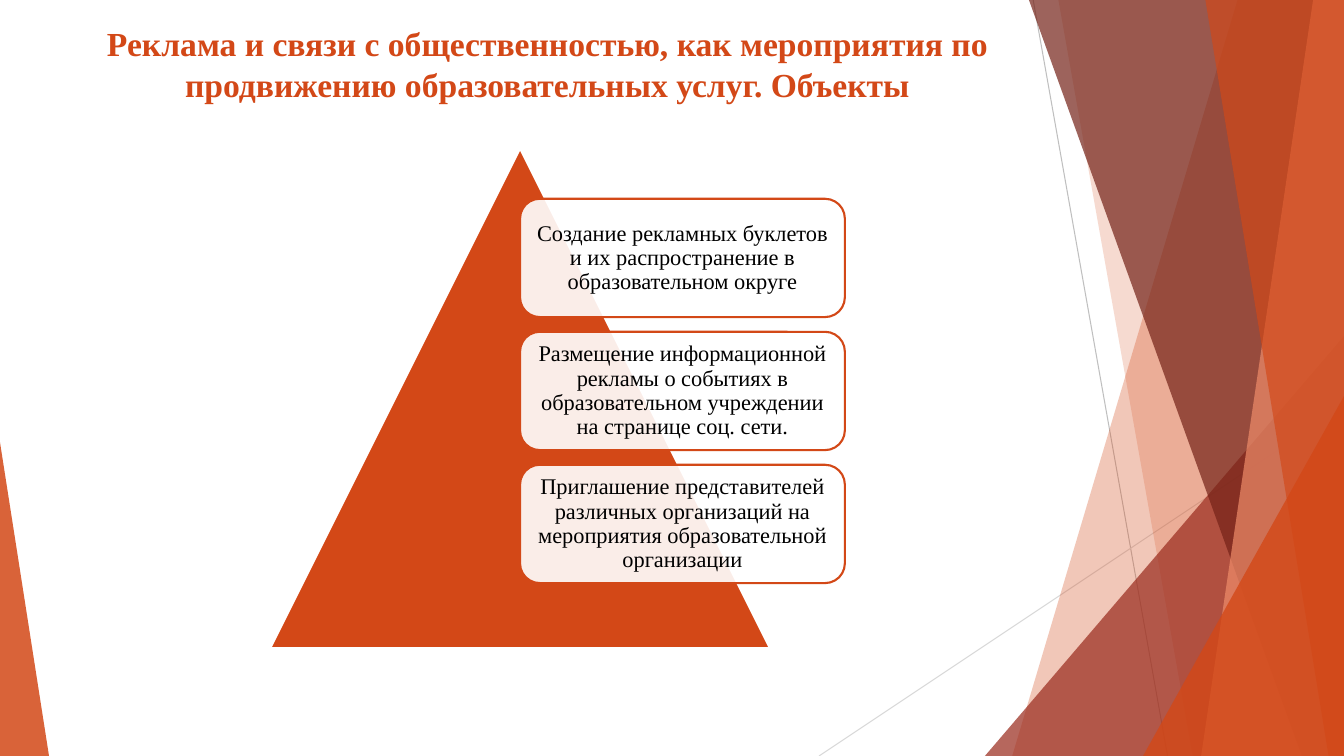
from lxml import etree
from pptx import Presentation
from pptx import util as u
from pptx.dml.color import RGBColor
from pptx.enum import shapes, text
from pptx.oxml import ns

RUST = RGBColor(0xD3, 0x48, 0x17)
BRICK = RGBColor(0x9B, 0x2D, 0x1F)
WINE = RGBColor(0x74, 0x22, 0x17)
PEACH = RGBColor(0xEF, 0x8C, 0x6A)
WHITE = RGBColor(0xFF, 0xFF, 0xFF)
BLACK = RGBColor(0, 0, 0)
GREY = RGBColor(0xBF, 0xBF, 0xBF)
PALE = RGBColor(0xD9, 0xD9, 0xD9)
WIDE, HIGH = 960, 540


class Deck:
    font = "Times New Roman"

    def __init__(self, show):
        self.slide = show.slides.add_slide(show.slide_layouts[5])
        self.items = self.slide.shapes

    def paint(self, shape, fill, alpha=100, line=None):
        shape.shadow.inherit = False
        shape.fill.solid()
        shape.fill.fore_color.rgb = fill
        if alpha < 100:
            solid = shape.element.spPr.find(ns.qn("a:solidFill"))
            etree.SubElement(solid[0], ns.qn("a:alpha"), val=str(alpha * 1000))
        if line is None:
            shape.line.fill.background()
        else:
            shape.line.color.rgb = line
            shape.line.width = u.Pt(1.5)

    def label(self, frame, words, size, color, bold=False):
        frame.word_wrap = True
        frame.auto_size = text.MSO_AUTO_SIZE.NONE
        para = frame.paragraphs[0]
        para.alignment = text.PP_ALIGN.CENTER
        run = para.add_run()
        run.text = words
        run.font.name = self.font
        run.font.size = u.Pt(size)
        run.font.bold = bold
        run.font.color.rgb = color
        return para

    def title(self, words, *box):
        head = self.items.title
        head.left, head.top, head.width, head.height = map(u.Pt, box)
        self.label(head.text_frame, words, 24, RUST, True)
        head.text_frame.vertical_anchor = text.MSO_ANCHOR.TOP

    def line(self, start, end, color):
        rule = self.items.add_connector(
            shapes.MSO_CONNECTOR.STRAIGHT, *map(u.Pt, start + end))
        rule.line.color.rgb = color
        rule.line.width = u.Pt(0.75)
        etree.SubElement(rule.element.spPr, ns.qn("a:effectLst"))

    def band(self, top, foot, fill, alpha):
        pen = self.items.build_freeform(u.Pt(top), 0)
        ends = [(WIDE, 0), (WIDE, HIGH), (foot, HIGH)]
        pen.add_line_segments([(u.Pt(x), u.Pt(y)) for x, y in ends])
        self.paint(pen.convert_to_shape(), fill, alpha)

    def peak(self, box, tip, fill, alpha=100, line=None):
        shape = self.items.add_shape(
            shapes.MSO_SHAPE.ISOSCELES_TRIANGLE, *map(u.Pt, box))
        shape.adjustments[0] = tip
        self.paint(shape, fill, alpha, line)

    def card(self, box, words):
        shape = self.items.add_shape(
            shapes.MSO_SHAPE.ROUNDED_RECTANGLE, *map(u.Pt, box))
        self.paint(shape, WHITE, 90, RUST)
        frame = shape.text_frame
        frame.margin_left = frame.margin_right = u.Pt(5)
        frame.margin_top = frame.margin_bottom = u.Pt(5)
        frame.vertical_anchor = text.MSO_ANCHOR.MIDDLE
        self.label(frame, words, 16, BLACK).line_spacing = 0.9


def main():
    show = Presentation()
    show.slide_width, show.slide_height = u.Pt(WIDE), u.Pt(HIGH)
    deck = Deck(show)

    deck.line((738, 0), (834, HIGH), GREY)
    deck.line((WIDE, 290), (585, HIGH), PALE)
    deck.band(884, 723, RUST, 30)
    deck.band(756, 852, RUST, 20)
    deck.peak((703.5, 240, 256.5, 300), 1, BRICK, 72)
    deck.band(735, 930, WINE, 70)
    deck.band(938, 858, PEACH, 70)
    deck.band(861, 949, RUST, 65)
    deck.peak((816.5, 283, 143.5, 257), 1, RUST, 80)
    deck.peak((0, 316, 35, 224), 0, RUST, 85)

    deck.title("Реклама и связи с общественностью, как мероприятия по "
               "продвижению образовательных услуг. Объекты",
               52.5, 13, 677, 74)

    deck.peak((193, 106, 357, 357), 0.5, RUST, line=WHITE)
    goals = [
        "Создание рекламных буклетов и их распространение в "
        "образовательном округе",
        "Размещение информационной рекламы о событиях в "
        "образовательном учреждении на странице соц. сети.",
        "Приглашение представителей различных организаций на "
        "мероприятия образовательной организации",
    ]
    for row, goal in enumerate(goals):
        deck.card((371.5, 142 + 95 * row, 232, 84.5), goal)

    show.save("out.pptx")


if __name__ == "__main__":
    main()
